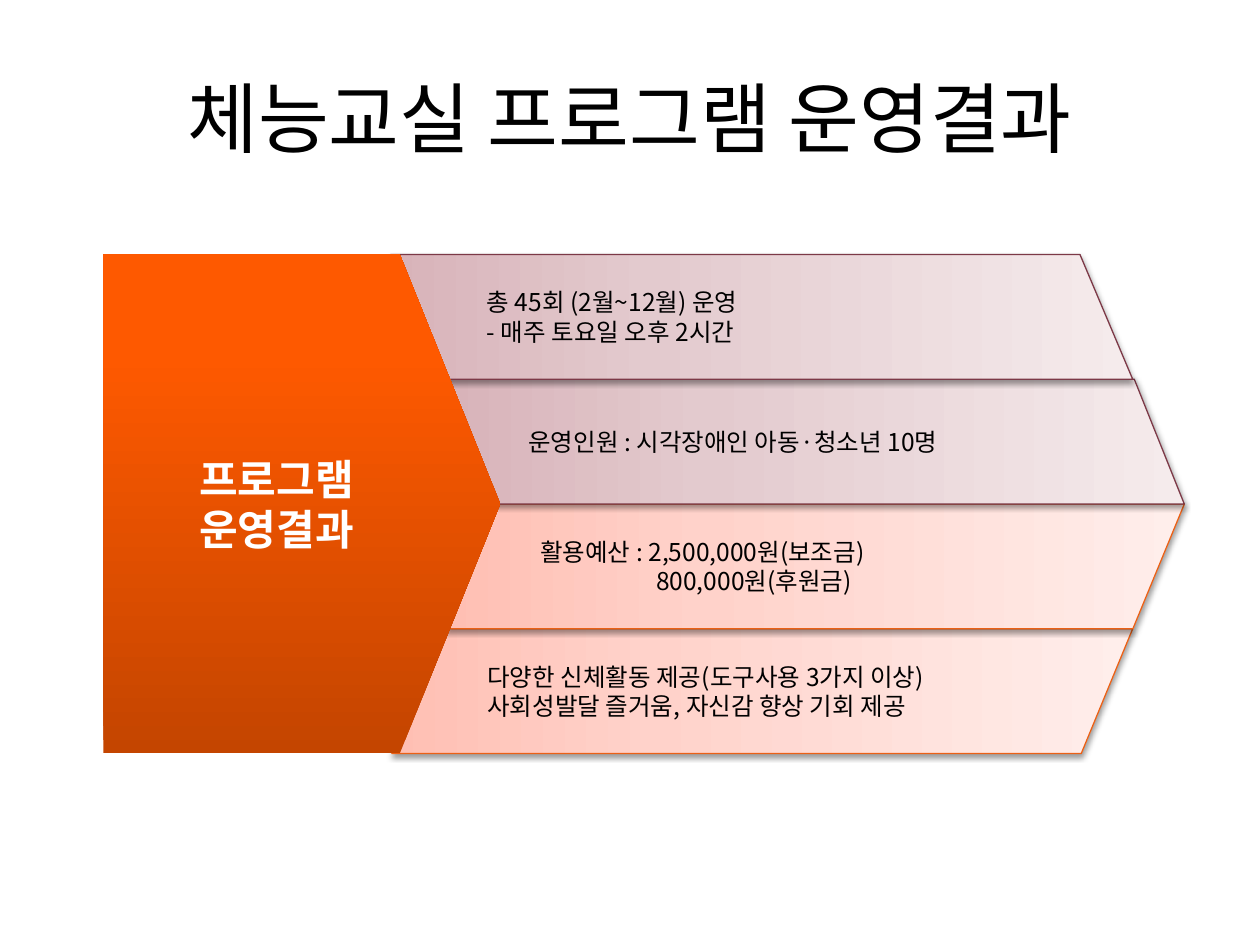
from lxml.etree import SubElement
from pptx import Presentation
from pptx.dml.color import RGBColor
from pptx.enum.shapes import MSO_SHAPE as SHAPE
from pptx.enum.text import MSO_ANCHOR as ANCHOR, PP_ALIGN as ALIGN
from pptx.oxml.ns import qn
from pptx.util import Inches, Pt

FONT = "Noto Sans CJK KR"
MAROON = dict(stops=[(0, "D8B3B9"), (35, "E3CACE"), (100, "F5EBEC")],
              line="7C3947", flip=True)
ORANGE = dict(stops=[(0, "FFBFB3"), (35, "FFD2CA"), (100, "FFEEEB")],
              line="EB6015", flip=False)
BAND_H = 0.99


def rgb(color):
    return RGBColor.from_string(color)


def add_text(sp, lines, size, color="000000", bold=False, align=ALIGN.LEFT,
             wrap=True, left=0.1, right=0.1, hang=0):
    tf = sp.text_frame
    tf.word_wrap = wrap
    tf.vertical_anchor = ANCHOR.MIDDLE
    tf.margin_left, tf.margin_right = Inches(left), Inches(right)
    for i, line in enumerate(lines):
        p = tf.add_paragraph() if i else tf.paragraphs[0]
        p.alignment = align
        if i and hang:
            p._p.get_or_add_pPr().set("marL", str(Inches(hang)))
        r = p.add_run()
        r.text = line
        r.font.size, r.font.bold, r.font.name = Pt(size), bold, FONT
        r.font.color.rgb = rgb(color)
        SubElement(r._r.get_or_add_rPr(), qn("a:ea")).set("typeface", FONT)


def fill_gradient(sp, stops, angle):
    sp.fill.gradient()
    grad = sp._element.spPr.find(qn("a:gradFill"))
    grad.find(qn("a:lin")).set("ang", str(angle * 60000))
    gs_list = grad.find(qn("a:gsLst"))
    for gs in list(gs_list):
        gs_list.remove(gs)
    for pos, color in stops:
        gs = SubElement(gs_list, qn("a:gs"), pos=str(pos * 1000))
        SubElement(gs, qn("a:srgbClr"), val=str(rgb(color)))


def add_shadow(sp):
    effects = sp._element.spPr.find(qn("a:effectLst"))
    shadow = SubElement(effects, qn("a:outerShdw"), blurRad=str(Pt(3.1)),
                        dist=str(Pt(1.6)), dir="5400000", rotWithShape="0")
    color = SubElement(shadow, qn("a:srgbClr"), val="000000")
    SubElement(color, qn("a:alpha"), val="38000")


def add_block(slide, kind, box, adj, stops, angle):
    sp = slide.shapes.add_shape(kind, *map(Inches, box))
    sp.adjustments[0] = adj
    sp.shadow.inherit = False
    fill_gradient(sp, stops, angle)
    sp.line.fill.background()
    return sp


def add_title(slide, box, text):
    sp = slide.shapes.add_textbox(*map(Inches, box))
    add_text(sp, [text], 44, align=ALIGN.CENTER)


def add_band(slide, box, adj, lines, theme, **text_format):
    flip = theme["flip"]
    sp = add_block(slide, SHAPE.PARALLELOGRAM, box, adj, theme["stops"],
                   180 if flip else 0)
    if flip:
        sp._element.spPr.find(qn("a:xfrm")).set("flipH", "1")
    sp.line.color.rgb = rgb(theme["line"])
    sp.line.width = Pt(0.75)
    add_shadow(sp)
    add_text(sp, lines, 14, **text_format)


def add_heading(slide, box, lines):
    stops = [(0, "C44500"), (80, "FE5900"), (100, "FF5A00")]
    sp = add_block(slide, SHAPE.PENTAGON, box, 0.253, stops, 270)
    add_text(sp, lines, 24, "FFFFFF", bold=True, align=ALIGN.CENTER)


def add_results(slide, x, y):
    bands = [
        (2.28, 5.89, 0.423, MAROON, dict(wrap=False, right=0.12),
         ["총 45회 (2월~12월) 운영", "- 매주 토요일 오후 2시간"]),
        (2.72, 5.86, 0.401, MAROON, dict(wrap=False, left=0),
         ["운영인원 : 시각장애인 아동·청소년 10명"]),
        (2.71, 5.87, 0.412, ORANGE, dict(hang=0.92),
         ["활용예산 : 2,500,000원(보조금)", "800,000원(후원금)"]),
        (2.29, 5.88, 0.412, ORANGE, {},
         ["다양한 신체활동 제공(도구사용 3가지 이상)",
          "사회성발달 즐거움, 자신감 향상 기회 제공"]),
    ]
    for i, (dx, w, adj, theme, text_format, lines) in reversed(list(enumerate(bands))):
        box = (x + dx, y + i * BAND_H, w, BAND_H)
        add_band(slide, box, adj, lines, theme, **text_format)
    add_heading(slide, (x, y, 3.15, len(bands) * BAND_H), ["프로그램", "운영결과"])


def main():
    prs = Presentation()
    prs.slide_width, prs.slide_height = Inches(10), Inches(7.5)
    slide = prs.slides.add_slide(prs.slide_layouts[6])
    add_title(slide, (0.5, 0.3, 9, 1.25), "체능교실 프로그램 운영결과")
    add_results(slide, 0.82, 2.02)
    prs.save("out.pptx")


if __name__ == "__main__":
    main()
